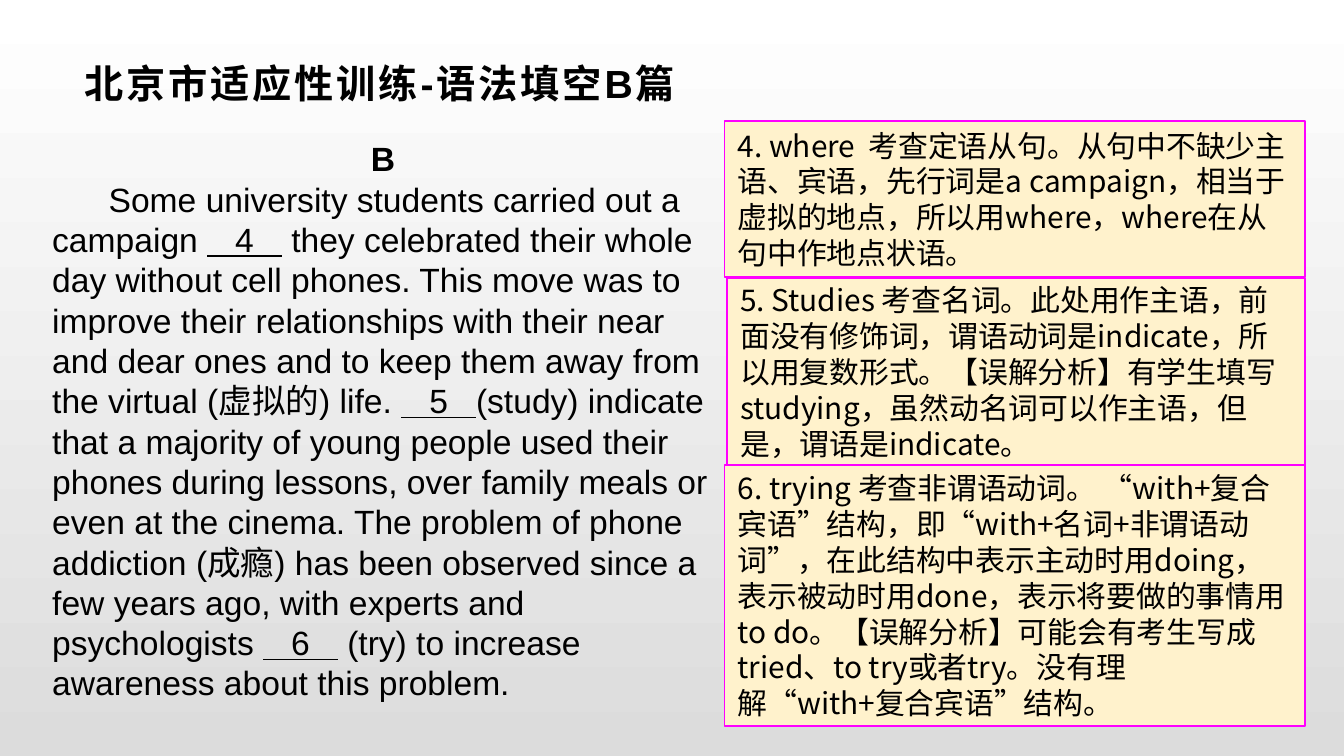
"""Build a grammar slide: a gap-fill passage on the left, answer notes on the right."""
from lxml import etree
from pptx import Presentation
from pptx.dml.color import RGBColor
from pptx.enum.shapes import MSO_SHAPE
from pptx.enum.text import MSO_ANCHOR, PP_ALIGN
from pptx.oxml.ns import qn
from pptx.util import Inches, Pt

RECT = MSO_SHAPE.RECTANGLE
TOP, MIDDLE = MSO_ANCHOR.TOP, MSO_ANCHOR.MIDDLE
LEFT, CENTER = PP_ALIGN.LEFT, PP_ALIGN.CENTER
COLORS = {"text": "000000", "note": "FFF2CC", "border": "FF00FF",
          "bg_top": "FFFFFF", "bg_bottom": "DCDCDC"}
LATIN, CJK = "Arial", "Noto Sans CJK SC"
LINE_PITCH = 1.2
SLIDE_WIDTH = 10

TITLE = "北京市适应性训练-语法填空B篇"
PASSAGE = [
    ("Some university students carried out a campaign ", False),
    ("   4   ", True),
    (" they celebrated their whole day without cell phones. This move was to improve "
     "their relationships with their near and dear ones and to keep them away from "
     "the virtual (虚拟的) life. ", False),
    ("   5   ", True),
    ("(study) indicate that a majority of young people used their phones during lessons, "
     "over family meals or even at the cinema. The problem of phone addiction (成瘾) has "
     "been observed since a few years ago, with experts and psychologists ", False),
    ("   6   ", True),
    (" (try) to increase awareness about this problem.", False),
]
NOTES = [
    ((5.39, 0.9, 4.32, 1.16),
     "4. where  考查定语从句。从句中不缺少主语、宾语，先行词是a campaign，"
     "相当于虚拟的地点，所以用where，where在从句中作地点状语。"),
    ((5.41, 2.07, 4.3, 1.39),
     "5. Studies 考查名词。此处用作主语，前面没有修饰词，谓语动词是indicate，"
     "所以用复数形式。【误解分析】有学生填写studying，虽然动名词可以作主语，"
     "但是，谓语是indicate。"),
    ((5.39, 3.46, 4.32, 1.94),
     "6. trying 考查非谓语动词。 “with+复合宾语”结构，即“with+名词+非谓语动词”，"
     "在此结构中表示主动时用doing，表示被动时用done，表示将要做的事情用to do。"
     "【误解分析】可能会有考生写成tried、to try或者try。没有理解“with+复合宾语”结构。"),
]


def rgb(name):
    return RGBColor.from_string(COLORS[name])


def add_run(p, text, spacing=0, **font):
    r = p.add_run()
    r.text = text
    r.font.color.rgb = rgb("text")
    for name, value in font.items():
        setattr(r.font, name, value)
    rPr = r.font._element
    etree.SubElement(rPr, qn("a:ea")).set("typeface", CJK)
    if spacing:
        rPr.set("spc", str(spacing))


def format_paragraph(p, size, align=LEFT):
    p.alignment = align
    p.line_spacing = Pt(size * LINE_PITCH)


def add_text_box(s, box, anchor):
    tf = s.shapes.add_textbox(*map(Inches, box)).text_frame
    tf.word_wrap = True
    tf.vertical_anchor = anchor
    return tf


def add_title(s):
    tf = add_text_box(s, (0.55, 0.35, 8.9, 0.53), MIDDLE)
    margins = {"margin_left": 0.08, "margin_top": 0.03,
               "margin_right": 0.06, "margin_bottom": 0.03}
    for name, value in margins.items():
        setattr(tf, name, Inches(value))
    add_run(tf.paragraphs[0], TITLE, spacing=150, name=LATIN, size=Pt(21), bold=True)


def add_passage(s):
    tf = add_text_box(s, (0.29, 0.98, 5.12, 4.34), TOP)
    p = tf.paragraphs[0]
    format_paragraph(p, 18, CENTER)
    add_run(p, "B", name=LATIN, size=Pt(18), bold=True)
    p = tf.add_paragraph()
    format_paragraph(p, 18)
    p._p.get_or_add_pPr().set("indent", str(Inches(0.42)))
    for text, underline in PASSAGE:
        add_run(p, text, name=LATIN, size=Pt(18), underline=underline)


def add_note(s, box, text):
    sp = s.shapes.add_shape(RECT, *map(Inches, box))
    sp.shadow.inherit = False
    sp.fill.solid()
    sp.fill.fore_color.rgb = rgb("note")
    sp.line.color.rgb = rgb("border")
    sp.line.width = Pt(1)
    tf = sp.text_frame
    tf.word_wrap = True
    tf.vertical_anchor = MIDDLE
    p = tf.paragraphs[0]
    format_paragraph(p, 16)
    p._p.get_or_add_pPr().set("hangingPunct", "0")
    add_run(p, text, name=CJK, size=Pt(16))


def main():
    prs = Presentation()
    prs.slide_width, prs.slide_height = Inches(SLIDE_WIDTH), Inches(SLIDE_WIDTH * 9 / 16)
    s = prs.slides.add_slide(prs.slide_layouts[6])
    fill = s.background.fill
    fill.gradient()
    fill.gradient_angle = 270
    for stop, position, name in zip(fill.gradient_stops, (0, 1), ("bg_top", "bg_bottom")):
        stop.position = position
        stop.color.rgb = rgb(name)
    add_title(s)
    add_passage(s)
    for box, text in NOTES:
        add_note(s, box, text)
    prs.save("out.pptx")


if __name__ == "__main__":
    main()
